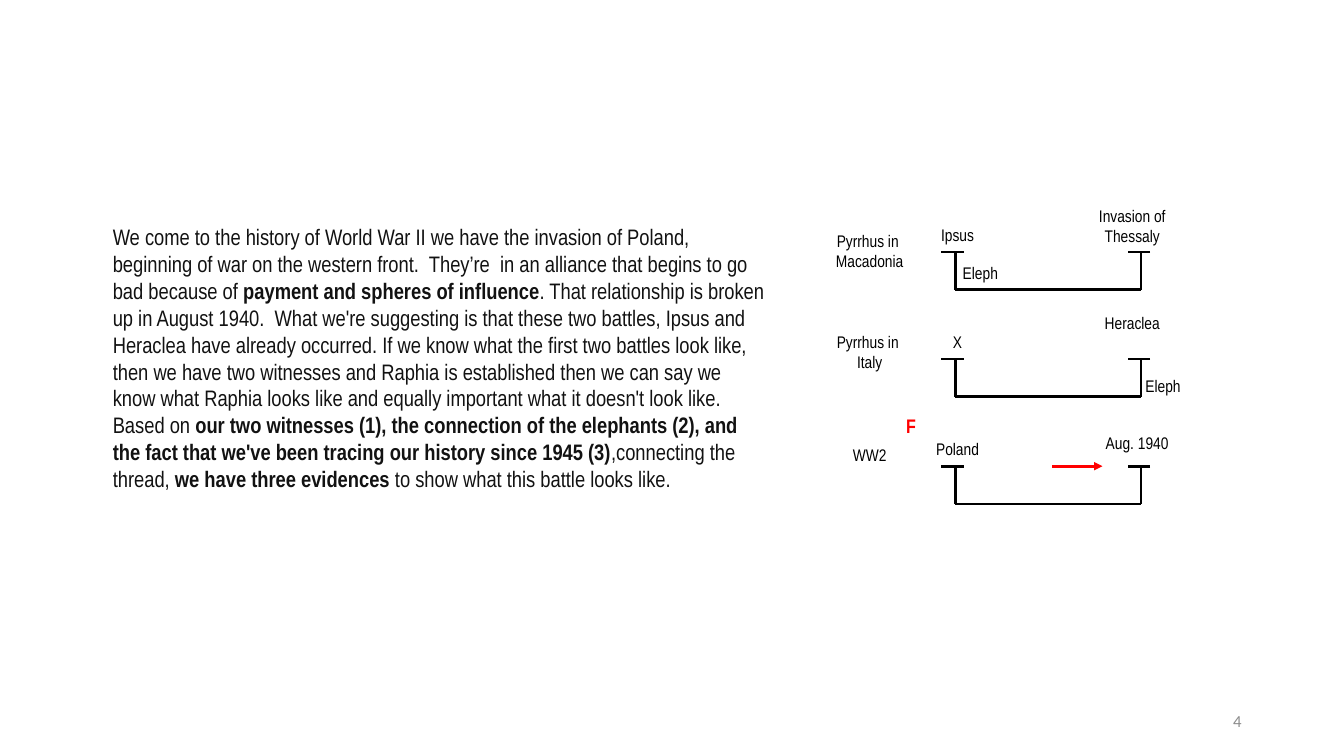
from lxml import etree
from pptx import Presentation
from pptx.dml.color import RGBColor
from pptx.enum.shapes import MSO_CONNECTOR
from pptx.enum.text import MSO_ANCHOR, PP_ALIGN
from pptx.oxml.ns import qn
from pptx.util import Pt

LINE = MSO_CONNECTOR.STRAIGHT
LEFT, MID, RIGHT = PP_ALIGN.LEFT, PP_ALIGN.CENTER, PP_ALIGN.RIGHT
TOP, CENTER = MSO_ANCHOR.TOP, MSO_ANCHOR.MIDDLE
HUES = {"ink": "000000", "prose": "121212", "red": "FF0000", "gray": "8C8C8C"}

deck = Presentation()
deck.slide_width, deck.slide_height = Pt(960), Pt(540)
slide = deck.slides.add_slide(deck.slide_layouts[6])


def add_text(paras, box, size=12, hue="ink", face="Arial Narrow",
             align=MID, anchor=TOP, inset=(3, 3)):
    """Place paragraphs, each a list of (words, bold) runs."""
    frame = slide.shapes.add_textbox(*map(Pt, box)).text_frame
    side, edge = map(Pt, inset)
    look = {"word_wrap": True, "vertical_anchor": anchor,
            "margin_left": side, "margin_right": side,
            "margin_top": edge, "margin_bottom": edge}
    for key, val in look.items():
        setattr(frame, key, val)
    for num, runs in enumerate(paras):
        para = frame.add_paragraph() if num else frame.paragraphs[0]
        para.alignment = align
        for words, bold in runs:
            run = para.add_run()
            run.text = words
            for key, val in {"name": face, "size": Pt(size), "bold": bold}.items():
                setattr(run.font, key, val)
            run.font.color.rgb = RGBColor.from_string(HUES[hue])


def add_line(shapes, ends, hue="ink"):
    line = shapes.add_connector(LINE, *map(Pt, ends))
    line.line.width = Pt(2)
    line.line.color.rgb = RGBColor.from_string(HUES[hue])
    etree.SubElement(line._element.spPr, qn("a:effectLst"))
    return line


# Main passage
prose = [
    ("We come to the history of World War II we have the invasion of Poland, "
     "beginning of war on the western front.  They’re  in an alliance that "
     "begins to go bad because of ", False),
    ("payment and spheres of influence", True),
    (". That relationship is broken up in August 1940.  What we're suggesting "
     "is that these two battles, Ipsus and Heraclea have already occurred. If "
     "we know what the first two battles look like, then we have two witnesses "
     "and Raphia is established then we can say we know what Raphia looks like "
     "and equally important what it doesn't look like. Based on ", False),
    ("our two witnesses (1), the connection of the elephants (2), and the fact "
     "that we've been tracing our history since 1945 (3)", True),
    (",connecting the thread, ", False),
    ("we have three evidences ", True),
    ("to show what this battle looks like.", False),
]
add_text([prose], (73.5, 156, 480, 216), 16, "prose", align=LEFT, inset=(7.2, 3.6))

# Three brackets, evenly spaced down the slide
START, END, FIRST, STEP, DEPTH = 682.5, 815, 180, 76.5, 27
for row in range(3):
    top = FIRST + row * STEP
    base = top + DEPTH
    group = slide.shapes.add_group_shape()
    add_line(group.shapes, (START, base, END, base))
    for post, tick in ((START, 672.5), (END, 805.5)):
        add_line(group.shapes, (post, top, post, base))
        add_line(group.shapes, (tick + 16, top, tick, top))

# Labels around the brackets
labels = [
    (["Ipsus"], (664, 157.5, 40, 20)),
    (["Invasion of Thessaly"], (776, 144, 65.5, 34)),
    (["Pyrrhus in ", "Macadonia"], (589.5, 162, 63.5, 34)),
    (["X"], (664, 234, 40, 20)),
    (["Heraclea"], (776, 220.5, 65.5, 34)),
    (["Pyrrhus in ", "Italy"], (589.5, 234, 63.5, 34)),
    (["Poland"], (664, 310.5, 40, 20)),
    (["Aug. 1940"], (783, 306, 58.5, 25)),
    (["WW2"], (589.5, 314.5, 63.5, 29.5)),
    (["Eleph"], (684, 184.5, 32.5, 20)),
    (["Eleph"], (814.5, 265.5, 32.5, 20)),
]
for rows, box in labels:
    add_text([[(words, False)] for words in rows], box)

# Red mark and arrow
add_text([[("F", True)]], (634.5, 292.5, 32.5, 20), 14, "red")
arrow = add_line(slide.shapes, (751.5, 333, 787.5, 333), "red")
etree.SubElement(arrow.line._get_or_add_ln(), qn("a:tailEnd"), type="triangle")

# Slide number
add_text([[("4", False)]], (678, 500.5, 216, 29), 12, "gray", "Calibri",
         RIGHT, CENTER, (7.2, 3.6))

deck.save("out.pptx")
